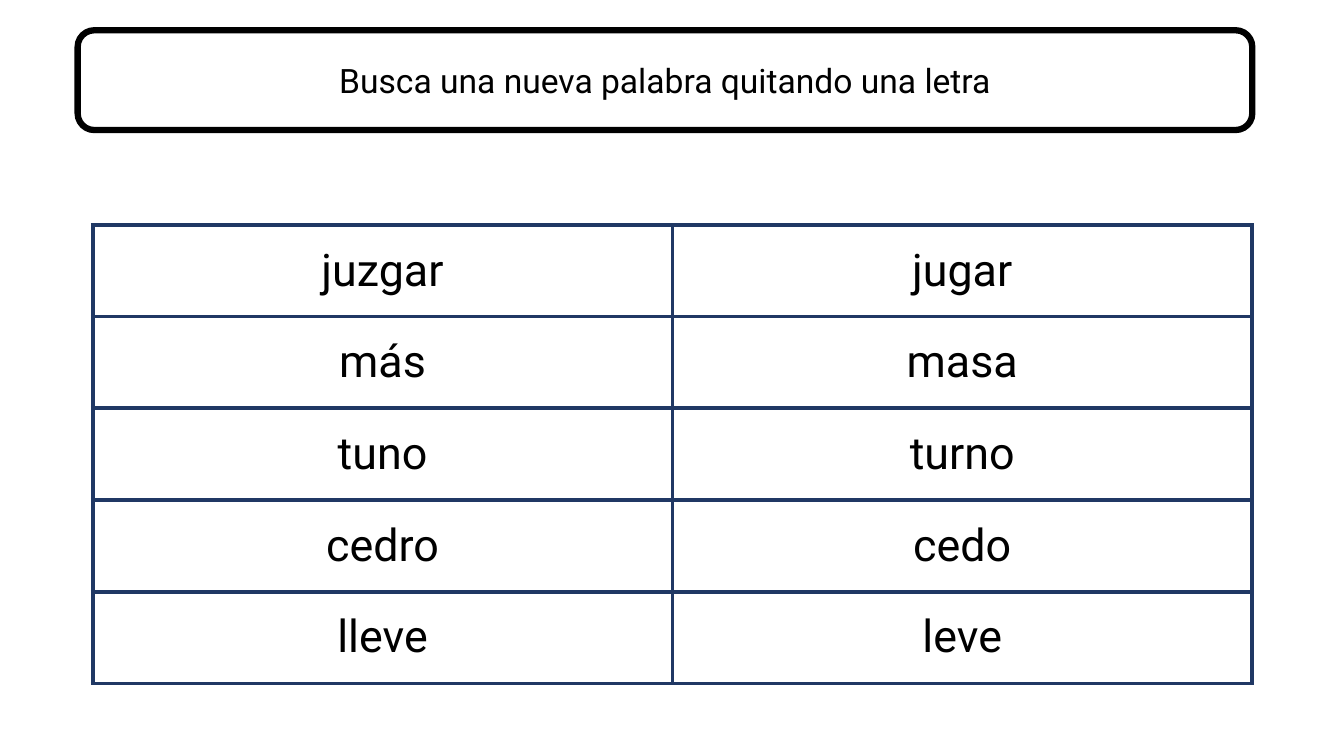
from dataclasses import dataclass

from lxml.etree import SubElement
from pptx import Presentation
from pptx.dml.color import RGBColor
from pptx.enum.shapes import MSO_SHAPE
from pptx.enum.text import MSO_ANCHOR, MSO_AUTO_SIZE, PP_ALIGN
from pptx.oxml.ns import qn
from pptx.slide import Slide
from pptx.table import _Cell
from pptx.text.text import TextFrame
from pptx.util import Inches, Pt

SLIDE_W, SLIDE_H = Inches(13.33), Inches(7.5)
FONT = "Roboto"
BLACK, WHITE, NAVY = "000000", "FFFFFF", "203864"
HEADING = "Busca una nueva palabra quitando una letra"


@dataclass(frozen=True)
class Box:
    """An area in percent of the slide's width and height."""
    left: float
    top: float
    width: float
    height: float

    def emu(self) -> tuple[int, int, int, int]:
        return (int(SLIDE_W * self.left / 100), int(SLIDE_H * self.top / 100),
                int(SLIDE_W * self.width / 100), int(SLIDE_H * self.height / 100))


@dataclass(frozen=True)
class WordPair:
    word: str
    answer: str


HEADING_BOX = Box(5.78, 4, 87.4, 13.2)
TABLE_BOX = Box(6.9, 29.75, 86.27, 60.67)
PAIRS = [
    WordPair("juzgar", "jugar"),
    WordPair("más", "masa"),
    WordPair("tuno", "turno"),
    WordPair("cedro", "cedo"),
    WordPair("lleve", "leve"),
]


def color(value: str) -> RGBColor:
    return RGBColor.from_string(value)


def write(tf: TextFrame, text: str, size: float) -> None:
    p = tf.paragraphs[0]
    p.alignment = PP_ALIGN.CENTER
    r = p.add_run()
    r.text = text
    r.font.name = FONT
    r.font.size = Pt(size)
    r.font.color.rgb = color(BLACK)


def add_heading(slide: Slide) -> None:
    frame = slide.shapes.add_shape(MSO_SHAPE.ROUNDED_RECTANGLE, *HEADING_BOX.emu())
    frame.shadow.inherit = False
    frame.fill.solid()
    frame.fill.fore_color.rgb = color(WHITE)
    frame.line.color.rgb = color(BLACK)
    frame.line.width = Pt(4.5)

    title = slide.shapes.title
    title.left, title.top, title.width, title.height = HEADING_BOX.emu()
    tf = title.text_frame
    tf.auto_size = MSO_AUTO_SIZE.NONE
    tf.word_wrap = True
    tf.vertical_anchor = MSO_ANCHOR.MIDDLE
    write(tf, HEADING, 24)
    # The title text sits in front of its frame.
    slide.shapes._spTree.append(title._element)


def set_borders(cell: _Cell, value: str, width: float) -> None:
    tcPr = cell._tc.get_or_add_tcPr()
    for index, side in enumerate(("lnL", "lnR", "lnT", "lnB")):
        ln = SubElement(tcPr, qn(f"a:{side}"), w=str(Pt(width)))
        tcPr.insert(index, ln)
        fill = SubElement(ln, qn("a:solidFill"))
        SubElement(fill, qn("a:srgbClr"), val=value)


def add_word_table(slide: Slide) -> None:
    table = slide.shapes.add_table(len(PAIRS), 2, *TABLE_BOX.emu()).table
    table.first_row = False
    table.horz_banding = False
    for row, pair in enumerate(PAIRS):
        for col, text in enumerate((pair.word, pair.answer)):
            cell = table.cell(row, col)
            cell.fill.solid()
            cell.fill.fore_color.rgb = color(WHITE)
            cell.vertical_anchor = MSO_ANCHOR.MIDDLE
            set_borders(cell, NAVY, 3)
            write(cell.text_frame, text, 32)


def main() -> None:
    prs = Presentation()
    prs.slide_width, prs.slide_height = SLIDE_W, SLIDE_H
    slide = prs.slides.add_slide(prs.slide_layouts.get_by_name("Title Only"))
    add_heading(slide)
    add_word_table(slide)
    prs.save("out.pptx")


if __name__ == "__main__":
    main()
